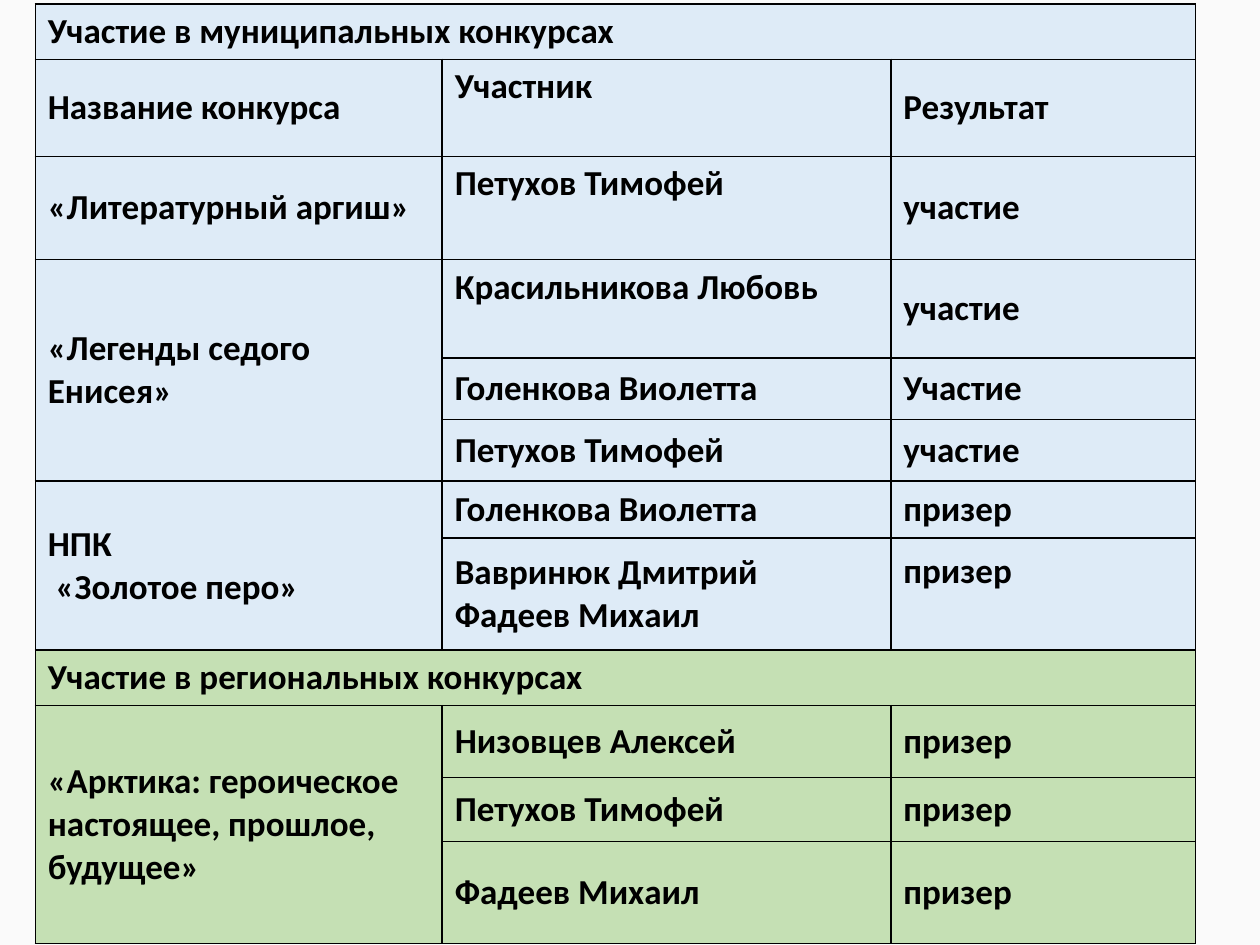
from lxml.etree import SubElement
from pptx import Presentation
from pptx.dml.color import RGBColor
from pptx.enum.text import MSO_ANCHOR as Anchor
from pptx.oxml.ns import qn
from pptx.util import Inches, Pt

BLUE, GREEN, BLACK, PAGE = "DEEBF7", "C5E0B4", "000000", "FAFAFA"
COLUMN_WIDTHS = [3.23, 3.56, 2.42]
HEADING_HEIGHT = 0.44

# Section: title, fill, contests; contest: name, entries;
# entry: row height, participants, result
SECTIONS = [
    ("Участие в муниципальных конкурсах", BLUE, [
        ("Название конкурса", [(0.77, "Участник", "Результат")]),
        ("«Литературный аргиш»", [(0.82, "Петухов Тимофей", "участие")]),
        ("«Легенды седого Енисея»", [
            (0.78, "Красильникова Любовь", "участие"),
            (0.49, "Голенкова Виолетта", "Участие"),
            (0.49, "Петухов Тимофей", "участие"),
        ]),
        ("НПК\n «Золотое перо»", [
            (0.45, "Голенкова Виолетта", "призер"),
            (0.89, "Вавринюк Дмитрий\nФадеев Михаил", "призер"),
        ]),
    ]),
    ("Участие в региональных конкурсах", GREEN, [
        ("«Арктика: героическое настоящее, прошлое, будущее»", [
            (0.57, "Низовцев Алексей", "призер"),
            (0.51, "Петухов Тимофей", "призер"),
            (0.81, "Фадеев Михаил", "призер"),
        ]),
    ]),
]
# (row, column) of cells set at the top, with their top margin
TOP_CELLS = {(1, 1): 0.05, (2, 1): 0.05, (3, 1): 0.05, (7, 2): 0.1}


def rgb(color):
    return RGBColor.from_string(color)


def add_borders(cell):
    """Black 1 pt lines, placed before the fill as the schema requires."""
    properties = cell._tc.get_or_add_tcPr()
    for position, side in enumerate(("lnL", "lnR", "lnT", "lnB")):
        line = SubElement(properties, qn(f"a:{side}"), w=str(Pt(1)))
        SubElement(SubElement(line, qn("a:solidFill")), qn("a:srgbClr"), val=BLACK)
        properties.insert(position, line)


def write(cell, text):
    for number, words in enumerate(text.split("\n")):
        frame = cell.text_frame
        paragraph = frame.add_paragraph() if number else frame.paragraphs[0]
        run = paragraph.add_run()
        run.text = words
        run.font.name, run.font.size, run.font.bold = "Calibri", Pt(20), True
        run.font.color.rgb = rgb(BLACK)


# Lay the sections out as rows, texts and merged areas
heights, fills, texts, merges = [], [], {}, []
for title, fill, contests in SECTIONS:
    row = len(heights)
    texts[row, 0] = title
    merges.append(((row, 0), (row, len(COLUMN_WIDTHS) - 1)))
    heights.append(HEADING_HEIGHT)
    fills.append(fill)
    for contest, entries in contests:
        first = len(heights)
        texts[first, 0] = contest
        for height, participants, result in entries:
            texts[len(heights), 1] = participants
            texts[len(heights), 2] = result
            heights.append(height)
            fills.append(fill)
        if len(entries) > 1:
            merges.append(((first, 0), (len(heights) - 1, 0)))

prs = Presentation()
prs.slide_width, prs.slide_height = Inches(10), Inches(7.5)
slide = prs.slides.add_slide(prs.slide_layouts[6])
slide.background.fill.solid()
slide.background.fill.fore_color.rgb = rgb(PAGE)

results = slide.shapes.add_table(
    len(heights), len(COLUMN_WIDTHS), Inches(0.28), Inches(0.03),
    Inches(sum(COLUMN_WIDTHS)), Inches(sum(heights))).table
results.first_row = results.horz_banding = False
for column, width in zip(results.columns, COLUMN_WIDTHS):
    column.width = Inches(width)
for row, height in zip(results.rows, heights):
    row.height = Inches(height)

for row, fill in enumerate(fills):
    for column in range(len(COLUMN_WIDTHS)):
        cell = results.cell(row, column)
        cell.fill.solid()
        cell.fill.fore_color.rgb = rgb(fill)
        add_borders(cell)
        cell.vertical_anchor = Anchor.MIDDLE
        if (row, column) in TOP_CELLS:
            cell.vertical_anchor = Anchor.TOP
            cell.margin_top = Inches(TOP_CELLS[row, column])
for start, end in merges:
    results.cell(*start).merge(results.cell(*end))
for place, text in texts.items():
    write(results.cell(*place), text)

prs.save("out.pptx")
